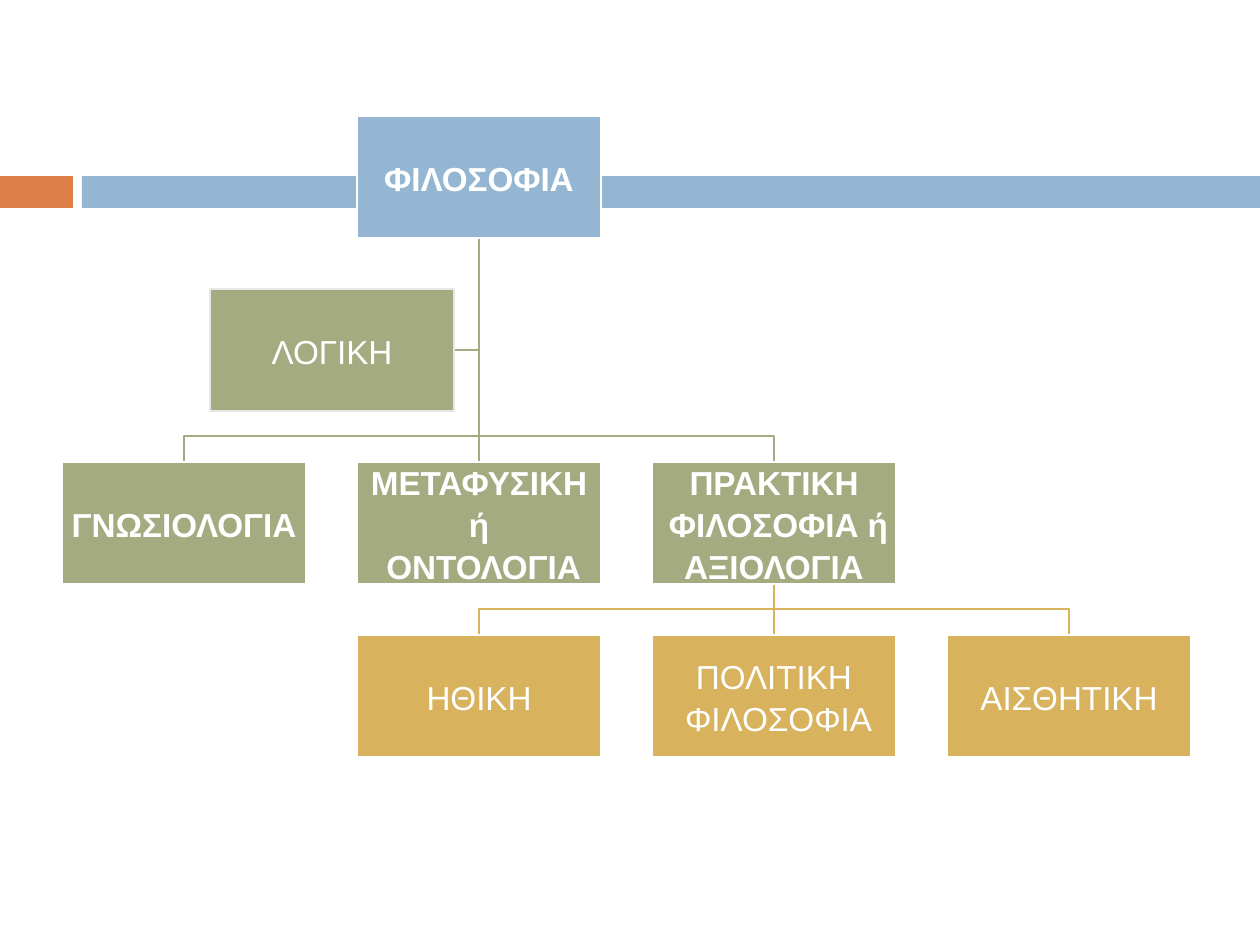
from pptx import Presentation
from pptx.dml.color import RGBColor
from pptx.enum.shapes import MSO_CONNECTOR as Link, MSO_SHAPE as Kind
from pptx.enum.text import MSO_ANCHOR as Anchor, PP_ALIGN as Align
from pptx.oxml.ns import qn
from pptx.util import Pt
from lxml import etree

PX = 914400 // 126
BLUE, GREEN, GOLD = "94B6D2", "A5AB81", "D8B25C"
ORANGE, WHITE, GRAY = "DD8047", "FFFFFF", "E7E7E7"
LEFT, TOP, STEP, DROP = 62, 116, 295, 173
WIDE, HIGH, STUB = 244, 122, 26


def color(code):
    return RGBColor.from_string(code)


def left(col):
    return round(LEFT + col * STEP)


def mid(col):
    return left(col) + WIDE // 2


def top(row):
    return TOP + row * DROP


class Chart:
    """Draws an organisation chart on one slide, in px."""

    def __init__(self, slide):
        self.shapes = slide.shapes

    def rect(self, x, y, w, h, fill):
        box = self.shapes.add_shape(Kind.RECTANGLE, *(n * PX for n in (x, y, w, h)))
        box.shadow.inherit = False
        box.fill.solid()
        box.fill.fore_color.rgb = color(fill)
        box.line.fill.background()
        return box

    def node(self, col, row, text, fill, bold=False, edge=WHITE):
        box = self.rect(left(col), top(row), WIDE, HIGH, fill)
        self.stroke(box, edge)
        frame = box.text_frame
        frame.word_wrap = True
        frame.vertical_anchor = Anchor.MIDDLE
        frame.margin_left = frame.margin_right = PX
        frame.margin_top = frame.margin_bottom = PX
        para = frame.paragraphs[0]
        para.text = text
        para.alignment = Align.CENTER
        para.line_spacing = 1.05
        font = para.font
        font.name, font.size, font.bold = "Arial", Pt(19), bold
        font.color.rgb = color(WHITE)
        return box

    def stroke(self, shape, code):
        shape.line.color.rgb = color(code)
        shape.line.width = Pt(1.5)

    def stem(self, col, row, end, code):
        """Straight line from the foot of one row to the head of another."""
        x = mid(col) * PX
        line = self.shapes.add_connector(
            Link.STRAIGHT, x, (top(row) + HIGH) * PX, x, top(end) * PX)
        etree.SubElement(line._element.spPr, qn("a:effectLst"))
        self.stroke(line, code)
        return line

    def bend(self, points, code):
        pen = self.shapes.build_freeform(*points[0], scale=PX)
        pen.add_line_segments(points[1:], close=False)
        path = pen.convert_to_shape()
        path.shadow.inherit = False
        path.fill.background()
        self.stroke(path, code)

    def branch(self, col, row, child, end, code):
        """Bent line from a parent down to a child in another column."""
        fork = top(end) - STUB
        self.bend([(mid(col), top(row) + HIGH), (mid(col), fork),
                   (mid(child), fork), (mid(child), top(end))], code)


def main():
    deck = Presentation()
    deck.slide_width, deck.slide_height = 1260 * PX, 945 * PX
    chart = Chart(deck.slides.add_slide(deck.slide_layouts[6]))

    chart.rect(0, 176, 73, 32, ORANGE)
    chart.rect(82, 176, 1178, 32, BLUE)

    side = top(1) + HIGH // 2
    chart.bend([(mid(1), top(0) + HIGH), (mid(1), side),
                (left(0.5) + WIDE, side)], GREEN)
    for child in (3, 1):
        chart.branch(2, 2, child, 3, GOLD)
    for child in (2, 0):
        chart.branch(1, 0, child, 2, GREEN)
    trunk = chart.stem(1, 0, 2, GREEN)
    twig = chart.stem(2, 2, 3, GOLD)

    root = chart.node(1, 0, "ΦΙΛΟΣΟΦΙΑ", BLUE, True)
    fields = [chart.node(col, 2, text, GREEN, True) for col, text in enumerate(
        ("ΓΝΩΣΙΟΛΟΓΙΑ", "ΜΕΤΑΦΥΣΙΚΗ ή\v ΟΝΤΟΛΟΓΙΑ",
         "ΠΡΑΚΤΙΚΗ\v ΦΙΛΟΣΟΦΙΑ ή\vΑΞΙΟΛΟΓΙΑ"))]
    parts = [chart.node(col, 3, text, GOLD) for col, text in enumerate(
        ("ΗΘΙΚΗ", "ΠΟΛΙΤΙΚΗ\v ΦΙΛΟΣΟΦΙΑ", "ΑΙΣΘΗΤΙΚΗ"), 1)]
    chart.node(0.5, 1, "ΛΟΓΙΚΗ", GREEN, edge=GRAY)

    for line, start, end in ((trunk, root, fields[1]), (twig, fields[2], parts[1])):
        line.begin_connect(start, 2)
        line.end_connect(end, 0)

    deck.save("out.pptx")


if __name__ == "__main__":
    main()
